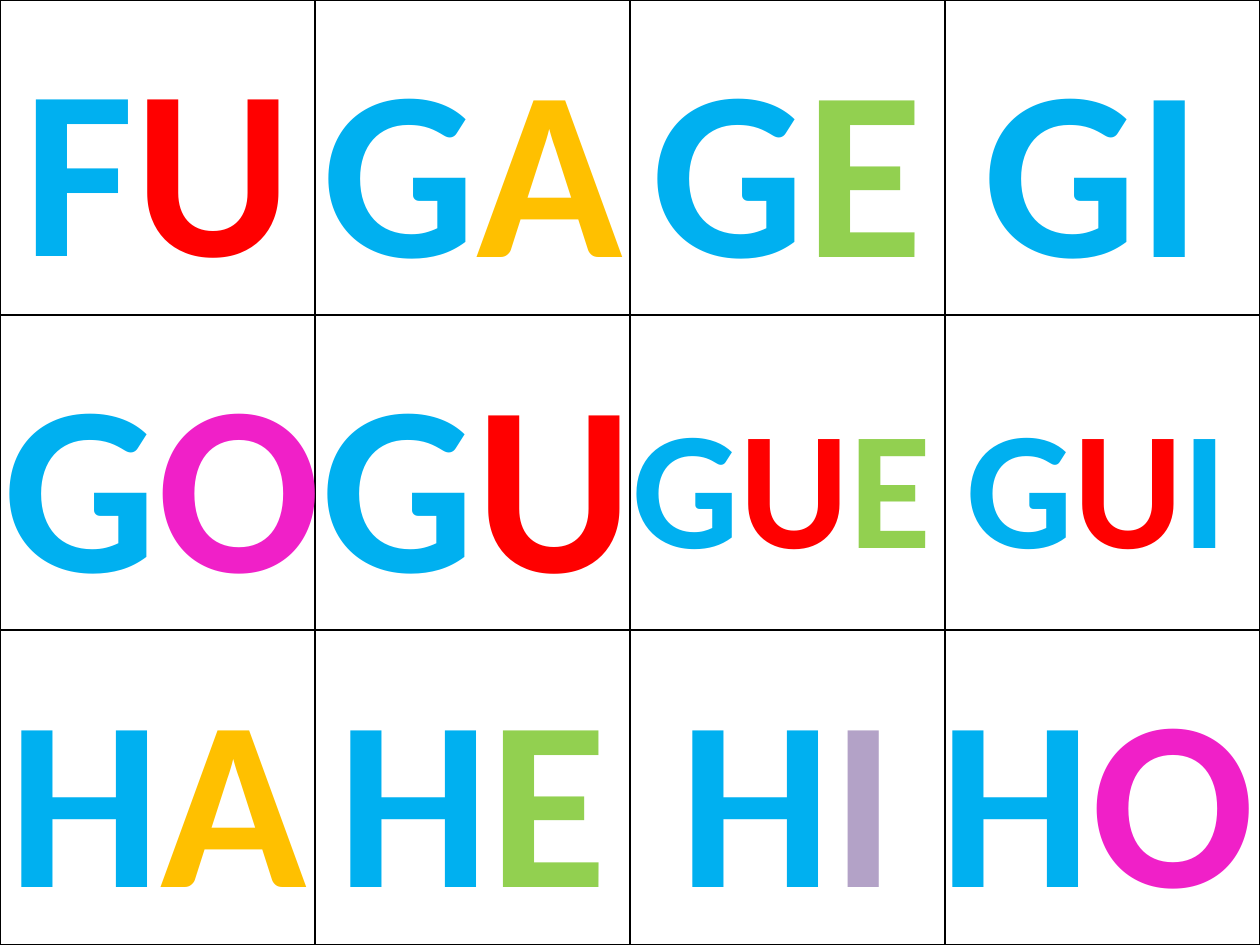
"""Build a sheet of syllable cards with coloured vowels."""
from dataclasses import dataclass
from itertools import groupby

from lxml.etree import SubElement
from pptx import Presentation
from pptx.dml.color import RGBColor
from pptx.enum.text import MSO_AUTO_SIZE, PP_ALIGN
from pptx.oxml.ns import qn
from pptx.slide import Slide
from pptx.table import _Cell
from pptx.util import Cm, Pt

CELL = 6.35
COLUMNS, ROWS = 4, 3
BLUE, WHITE, BLACK, NAVY = "00B0F0", "FFFFFF", "000000", "054697"
VOWELS = {"A": "FFC000", "E": "92D050", "I": "B3A2C7", "O": "F020C8", "U": "FF0000"}


@dataclass(frozen=True)
class Card:
    syllable: str
    width: float = 6.76
    shift: float = 0
    top: float = 0.2
    height: float = 6.15
    size: int = 138
    blue_letters: str = "FGH"

    def letter_colour(self, letter: str) -> str:
        return BLUE if letter in self.blue_letters else VOWELS[letter]


SMALL = {"width": 6.93, "shift": -0.11, "top": 1.19, "height": 4.37, "size": 96}
CARDS = [
    Card("FU", CELL, top=0.18),
    Card("GA"),
    Card("GE", CELL),
    Card("GI", shift=-0.2, blue_letters="GI"),
    Card("GO", 7.34, 0.09),
    Card("GU", 6.93, 0.09),
    Card("GUE", **SMALL),
    Card("GUI", **SMALL, blue_letters="GI"),
    Card("HA"),
    Card("HE"),
    Card("HI", CELL),
    Card("HO", 6.93, -0.11),
]


def colour(value: str) -> RGBColor:
    return RGBColor.from_string(value)


def add_line(parent, tag: str, value: str, position: int) -> None:
    """Insert a solid one-point line into text or cell properties."""
    line = SubElement(parent, qn(tag), w=str(Pt(1)))
    fill = SubElement(line, qn("a:solidFill"))
    SubElement(fill, qn("a:srgbClr"), val=value)
    parent.insert(position, line)


def style_cell(cell: _Cell) -> None:
    cell.fill.solid()
    cell.fill.fore_color.rgb = colour(WHITE)
    properties = cell._tc.get_or_add_tcPr()
    for position, side in enumerate("LRTB"):
        add_line(properties, f"a:ln{side}", BLACK, position)


def add_grid(page: Slide) -> None:
    frame = page.shapes.add_table(
        ROWS, COLUMNS, Cm(0), Cm(0), Cm(CELL * COLUMNS), Cm(CELL * ROWS)
    )
    for cell in frame.table.iter_cells():
        style_cell(cell)


def add_card(page: Slide, card: Card, row: int, column: int) -> None:
    left = (column + 0.5) * CELL + card.shift - card.width / 2
    box = page.shapes.add_textbox(
        Cm(left), Cm(row * CELL + card.top), Cm(card.width), Cm(card.height)
    )
    box.text_frame.word_wrap = False
    box.text_frame.auto_size = MSO_AUTO_SIZE.SHAPE_TO_FIT_TEXT
    para = box.text_frame.paragraphs[0]
    para.alignment = PP_ALIGN.CENTER
    para.font.name = "Calibri"
    para.font.size = Pt(card.size)
    para.font.bold = True
    for value, letters in groupby(card.syllable, card.letter_colour):
        span = para.add_run()
        span.text = "".join(letters)
        span.font.color.rgb = colour(value)
        add_line(span._r.get_or_add_rPr(), "a:ln", NAVY, 0)


def main() -> None:
    deck = Presentation()
    deck.slide_width, deck.slide_height = Cm(CELL * COLUMNS), Cm(CELL * ROWS)
    page = deck.slides.add_slide(deck.slide_layouts[6])
    add_grid(page)
    for index, card in enumerate(CARDS):
        add_card(page, card, *divmod(index, COLUMNS))
    deck.save("out.pptx")


if __name__ == "__main__":
    main()
